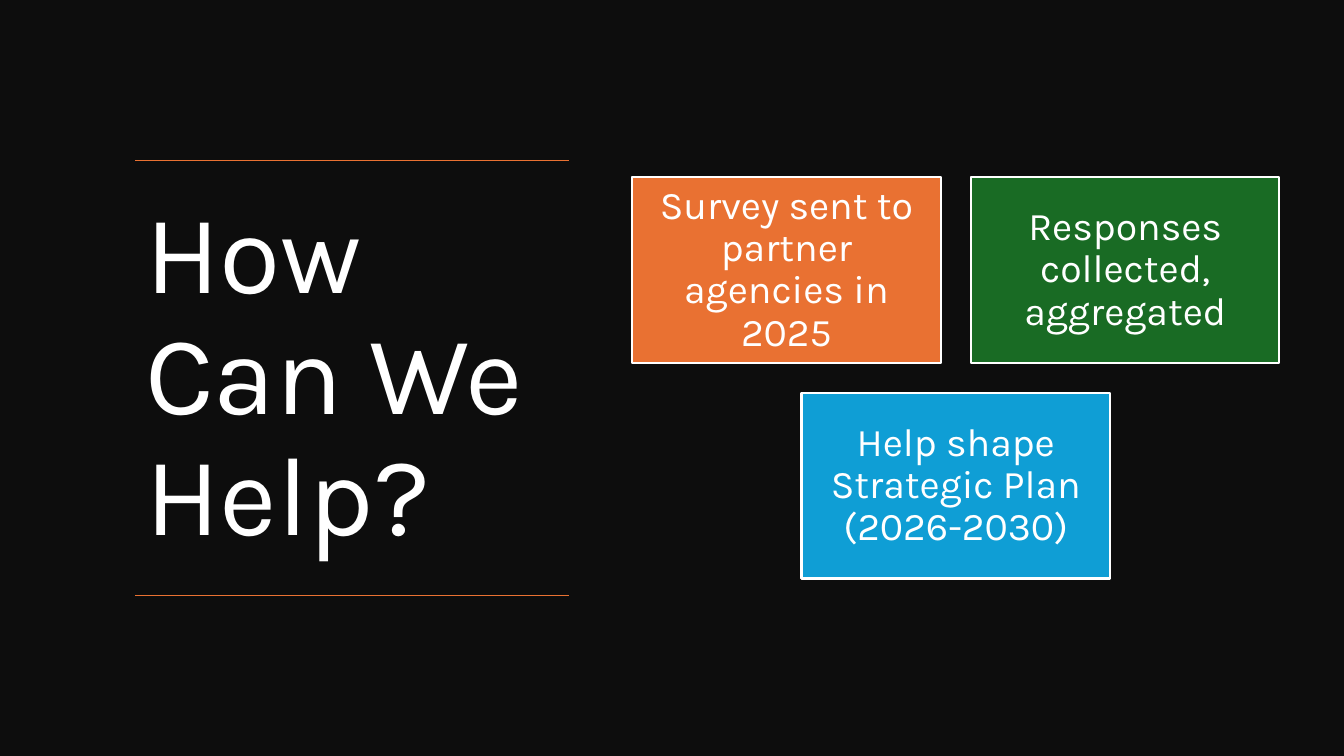
from dataclasses import dataclass

from pptx import Presentation
from pptx.dml.color import RGBColor as RGB
from pptx.enum.shapes import MSO_CONNECTOR as LINE, MSO_SHAPE as SHAPE
from pptx.enum.text import MSO_ANCHOR as ANCHOR, PP_ALIGN as ALIGN
from pptx.oxml.ns import qn
from pptx.util import Inches, Pt
from lxml import etree

TITLE = "How Can We Help?"
ROWS = [
    [("Survey sent to partner agencies in 2025", "E97132"),
     ("Responses collected, aggregated", "196B24")],
    [("Help shape Strategic Plan (2026-2030)", "0F9ED5")],
]


@dataclass
class Theme:
    font: str = "Karla"
    back: str = "0D0D0D"
    text: str = "FFFFFF"
    rule: str = "E97132"
    head: int = 80
    body: int = 28


theme = Theme()
WIDE, HIGH = 13.33, 7.5
LEFT, TOP, HEAD_W, HEAD_H = 1.34, 1.59, 4.3, 4.32
CARD_W, CARD_H, GAP = 3.06, 1.84, 0.3
MID, CARD_TOP = 9.48, 1.76


def write(frame, text, size, align, pad):
    frame.word_wrap = True
    frame.vertical_anchor = ANCHOR.MIDDLE
    frame.margin_left = frame.margin_right = Inches(pad[0])
    frame.margin_top = frame.margin_bottom = Inches(pad[1])
    frame.text = text
    para = frame.paragraphs[0]
    para.alignment = align
    para.line_spacing = 0.9
    font = para.runs[0].font
    font.name, font.size = theme.font, Pt(size)
    font.color.rgb = RGB.from_string(theme.text)


def block(slide, x, y, w, h, fill):
    """Add a plain filled rectangle without outline or shadow."""
    box = slide.shapes.add_shape(
        SHAPE.RECTANGLE, Inches(x), Inches(y), Inches(w), Inches(h))
    box.shadow.inherit = False
    box.fill.solid()
    box.fill.fore_color.rgb = RGB.from_string(fill)
    box.line.fill.background()
    return box


def rule(slide, y):
    """Add a thin line across the title column."""
    line = slide.shapes.add_connector(
        LINE.STRAIGHT, Inches(LEFT + HEAD_W), Inches(y), Inches(LEFT), Inches(y))
    line.line.color.rgb = RGB.from_string(theme.rule)
    line.line.width = Pt(1)
    etree.SubElement(line._element.spPr, qn("a:effectLst"))


def card(slide, x, y, text, fill):
    box = block(slide, x, y, CARD_W, CARD_H, fill)
    box.line.color.rgb = RGB.from_string(theme.text)
    box.line.width = Pt(1.5)
    write(box.text_frame, text, theme.body, ALIGN.CENTER, (0.12, 0.12))


def main():
    deck = Presentation()
    deck.slide_width, deck.slide_height = Inches(WIDE), Inches(HIGH)
    slide = deck.slides.add_slide(deck.slide_layouts[6])
    block(slide, 0, 0, WIDE, HIGH, theme.back)

    head = slide.shapes.add_textbox(
        Inches(LEFT), Inches(TOP), Inches(HEAD_W), Inches(HEAD_H))
    write(head.text_frame, TITLE, theme.head, ALIGN.LEFT, (0.1, 0.05))
    for y in (TOP, TOP + HEAD_H):
        rule(slide, y)

    for r, row in enumerate(ROWS):
        span = len(row) * (CARD_W + GAP) - GAP
        y = CARD_TOP + r * (CARD_H + GAP)
        for c, (text, fill) in enumerate(row):
            card(slide, MID - span / 2 + c * (CARD_W + GAP), y, text, fill)

    deck.save("out.pptx")


if __name__ == "__main__":
    main()
